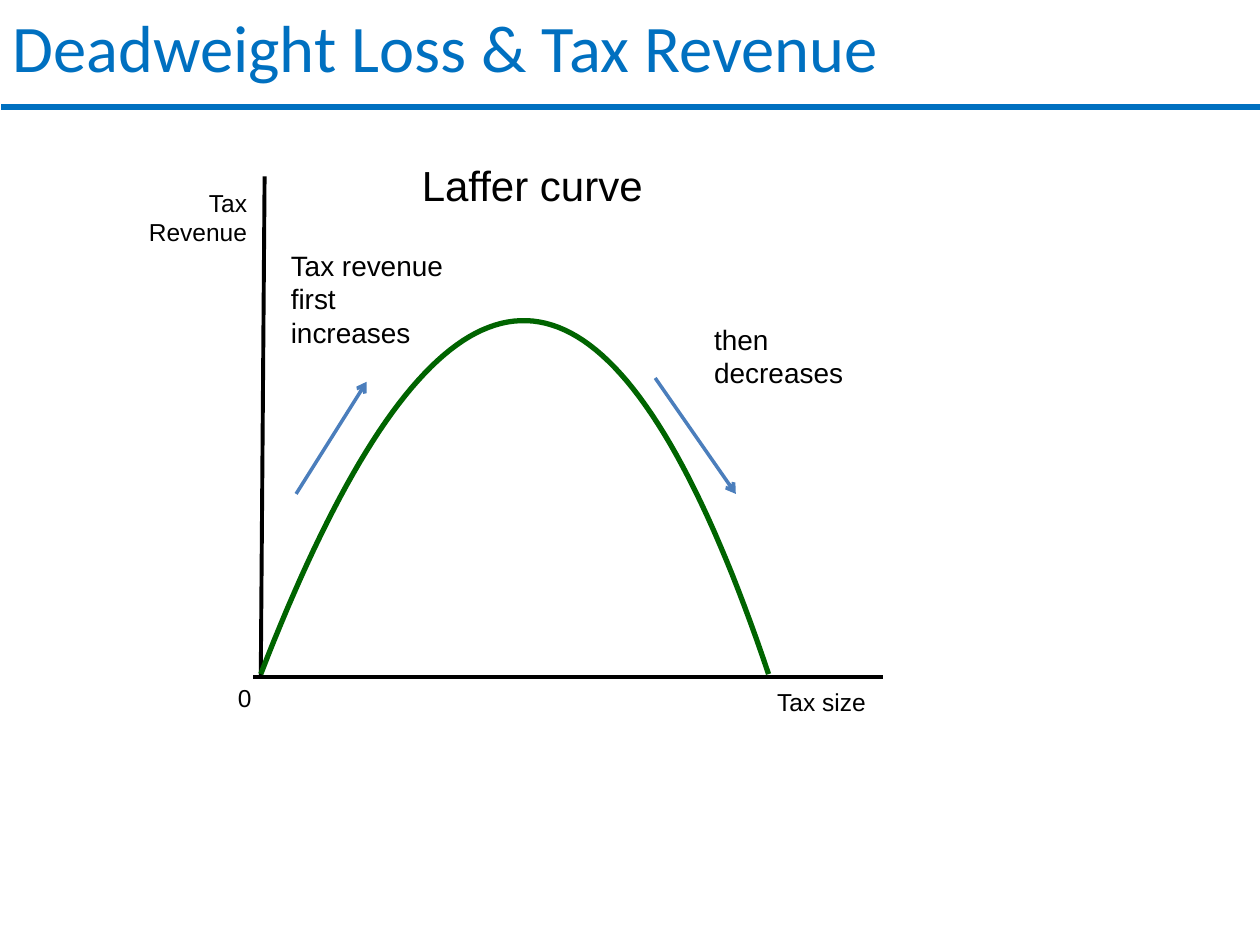
from lxml import etree
from pptx import Presentation
from pptx import util as u
from pptx.dml.color import RGBColor
from pptx.enum import shapes, text
from pptx.oxml import ns

THEME = {
    "blue": RGBColor.from_string("0070C0"),
    "arrow": RGBColor.from_string("4B7EBC"),
    "green": RGBColor.from_string("006400"),
    "black": RGBColor.from_string("000000"),
    "white": RGBColor.from_string("FFFFFF"),
    "title_font": "Calibri", "body_font": "Arial",
    "title": 38, "heading": 24, "note": 16, "label": 14,
}

presentation = Presentation()
presentation.slide_width, presentation.slide_height = u.Inches(10), u.Inches(7.5)
CELL = presentation.slide_width // 10  # square grid: 10 columns by 7.5 rows
slide = presentation.slides.add_slide(presentation.slide_layouts[5])


def write(words, column, row, columns, rows, shape=None, size="label", font="body_font",
          color="black", align="LEFT", wrap=False):
    """Put words, one paragraph a line, in a new text box or the given shape."""
    box = [int(n * CELL) for n in (column, row, columns, rows)]
    shape = shape or slide.shapes.add_textbox(*box)
    shape.left, shape.top, shape.width, shape.height = box
    frame = shape.text_frame
    frame.text = words
    frame.word_wrap = wrap
    frame.auto_size = text.MSO_AUTO_SIZE.NONE
    frame.vertical_anchor = text.MSO_ANCHOR.TOP
    for paragraph in frame.paragraphs:
        paragraph.alignment = text.PP_ALIGN[align]
        run_font = paragraph.runs[0].font
        run_font.name, run_font.size = THEME[font], u.Pt(THEME[size])
        run_font.color.rgb = THEME[color]


def draw_line(start, end, color="black", width=2.25, arrow=False):
    points = [int(n * CELL) for n in (*start, *end)]
    line = slide.shapes.add_connector(shapes.MSO_CONNECTOR.STRAIGHT, *points)
    line.line.color.rgb, line.line.width = THEME[color], u.Pt(width)
    if arrow:
        etree.SubElement(line.line._get_or_add_ln(), ns.qn("a:tailEnd"), type="arrow")
    etree.SubElement(line._element.spPr, ns.qn("a:effectLst"))


# Title and rule
write("Deadweight Loss & Tax Revenue", 0, 0, 10, 0.83, shape=slide.shapes.title,
      size="title", font="title_font", color="blue", wrap=True)
draw_line((0.01, 0.85), (10, 0.85), color="blue", width=3)

# Plot area and axes
plot = slide.shapes.add_shape(shapes.MSO_SHAPE.RECTANGLE,
                              *[int(n * CELL) for n in (2.07, 1.44, 4.93, 3.91)])
plot.shadow.inherit = False
plot.fill.solid()
plot.fill.fore_color.rgb = plot.line.color.rgb = THEME["white"]
plot.line.width = u.Pt(2)
draw_line((2.1, 1.4), (2.07, 5.36))
draw_line((2.01, 5.37), (7.01, 5.37))
write("Tax\nRevenue", 0.74, 1.44, 1.32, 0.79, align="RIGHT")
write("Tax size", 5.91, 5.4, 1.22, 0.46, align="CENTER")
write("0", 1.79, 5.37, 0.42, 0.46)

# Laffer curve: a cubic Bézier sampled at equal steps
controls = [(2.07, 5.35), (3.48, 1.71), (4.81, 1.51), (6.1, 5.35)]
STEPS = 80
curve_points = []
for step in range(STEPS + 1):
    t = step / STEPS
    weights = ((1 - t) ** 3, 3 * t * (1 - t) ** 2, 3 * t ** 2 * (1 - t), t ** 3)
    curve_points.append([int(CELL * sum(w * point[axis] for w, point in zip(weights, controls)))
                         for axis in (0, 1)])
builder = slide.shapes.build_freeform(*curve_points[0])
builder.add_line_segments(curve_points[1:], close=False)
curve = builder.convert_to_shape()
curve.shadow.inherit = False
curve.fill.background()
curve.line.color.rgb, curve.line.width = THEME["green"], u.Pt(3)
write("Laffer curve", 3.23, 1.22, 1.97, 0.5, size="heading", align="RIGHT")

# Notes with their arrows
notes = [
    ("Tax revenue first increases", (2.21, 1.92, 1.5, 0.91), (2.35, 3.92), (2.91, 3.03)),
    ("then decreases", (5.57, 2.51, 1.37, 0.64), (5.2, 3), (5.84, 3.92)),
]
for words, box, start, end in notes:
    write(words, *box, size="note", wrap=True)
    draw_line(start, end, color="arrow", width=2, arrow=True)

presentation.save("out.pptx")
